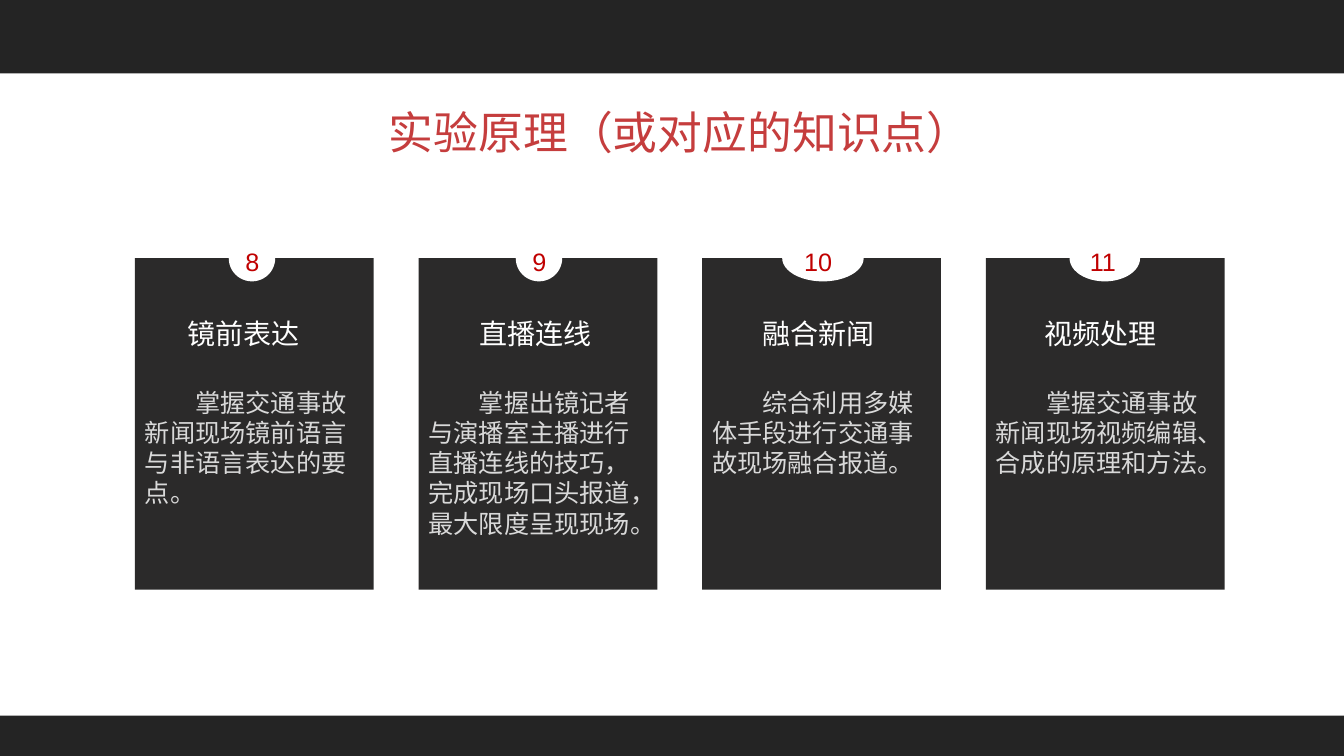
from dataclasses import dataclass
from typing import Optional

from lxml import etree
from pptx import Presentation
from pptx.dml.color import RGBColor
from pptx.enum import shapes, text
from pptx.oxml import ns
from pptx.shapes.autoshape import Shape
from pptx.slide import Slide
from pptx.util import Pt


@dataclass(frozen=True)
class Theme:
    band: str = "242424"
    card: str = "2B2A2A"
    white: str = "FFFFFF"
    title: str = "C53D3D"
    number: str = "C00000"
    body: str = "D9D9D9"
    title_size: float = 32
    heading_size: float = 20
    body_size: float = 18
    title_font: str = "Noto Sans CJK JP"
    text_font: str = "Noto Sans CJK SC"
    number_font: str = "Arial"


@dataclass(frozen=True)
class Box:
    left: float
    top: float
    width: float
    height: float

    def lengths(self) -> list[Pt]:
        return [Pt(value) for value in (self.left, self.top, self.width, self.height)]


@dataclass(frozen=True)
class Topic:
    number: str
    heading: str
    body: str
    badge_left: float
    badge_width: float
    heading_box: Box


THEME = Theme()
SLIDE_WIDTH, SLIDE_HEIGHT = 960, 540
CARD_LEFT, CARD_TOP, CARD_PITCH = 96.4, 184.4, 202.6
CARD_WIDTH, CARD_HEIGHT = 170.6, 236.8
BADGE_HEIGHT = 33.2
BADGE_TOP = CARD_TOP - BADGE_HEIGHT / 2

BANDS = [Box(0, 0, SLIDE_WIDTH, 52.4), Box(0, 511.2, SLIDE_WIDTH, 28.8)]
TITLE_BOX = Box(270.7, 70.6, 462.2, 46.1)
TOPICS = [
    Topic("8", "镜前表达", "掌握交通事故新闻现场镜前语言与非语言表达的要点。",
          163.4, 33.2, Box(126.7, 222.5, 126.7, 31.7)),
    Topic("9", "直播连线", "掌握出镜记者与演播室主播进行直播连线的技巧，完成现场口头报道，最大限度呈现现场。",
          368.4, 33.2, Box(335.5, 223.6, 113, 28.8)),
    Topic("10", "融合新闻", "综合利用多媒体手段进行交通事故现场融合报道。",
          558.7, 58.2, Box(537.8, 223.6, 113, 28.8)),
    Topic("11", "视频处理", "掌握交通事故新闻现场视频编辑、合成的原理和方法。",
          764, 50.4, Box(738.7, 224, 113, 28.8)),
]


def add_filled(slide: Slide, kind: shapes.MSO_SHAPE, box: Box, color: str) -> Shape:
    shape = slide.shapes.add_shape(kind, *box.lengths())
    shape.shadow.inherit = False
    shape.fill.solid()
    shape.fill.fore_color.rgb = RGBColor.from_string(color)
    shape.line.fill.background()
    return shape


def write(shape: Shape, words: str, *, font: str, size: float, color: str,
          anchor: text.MSO_ANCHOR = text.MSO_ANCHOR.MIDDLE,
          top_inset: float = 3.6, bottom_inset: float = 3.6,
          first_indent: float = 0, line_height: Optional[float] = None) -> None:
    """Fill a shape with one left-aligned paragraph; lengths are in points."""
    frame = shape.text_frame
    frame.word_wrap = True
    frame.vertical_anchor = anchor
    frame.margin_top, frame.margin_bottom = Pt(top_inset), Pt(bottom_inset)
    paragraph = frame.paragraphs[0]
    paragraph.alignment = text.PP_ALIGN.LEFT
    if line_height:
        paragraph.line_spacing = Pt(line_height)
    if first_indent:
        properties = paragraph._p.get_or_add_pPr()
        properties.set("marL", "0")
        properties.set("indent", str(int(Pt(first_indent))))
    run = paragraph.add_run()
    run.text = words
    run.font.size = Pt(size)
    run.font.color.rgb = RGBColor.from_string(color)
    run.font.name = font
    east_asian = etree.SubElement(run._r.get_or_add_rPr(), ns.qn("a:ea"))
    east_asian.set("typeface", font)


def add_topic(slide: Slide, topic: Topic, card_left: float) -> None:
    card = add_filled(slide, shapes.MSO_SHAPE.RECTANGLE,
                      Box(card_left, CARD_TOP, CARD_WIDTH, CARD_HEIGHT), THEME.card)
    write(card, topic.body, font=THEME.text_font, size=THEME.body_size, color=THEME.body,
          anchor=text.MSO_ANCHOR.TOP, top_inset=92, first_indent=36, line_height=21.6)

    badge = add_filled(slide, shapes.MSO_SHAPE.FLOWCHART_CONNECTOR,
                       Box(topic.badge_left, BADGE_TOP, topic.badge_width, BADGE_HEIGHT),
                       THEME.white)
    write(badge, topic.number, font=THEME.number_font, size=THEME.body_size,
          color=THEME.number, anchor=text.MSO_ANCHOR.TOP, bottom_inset=0)

    heading = slide.shapes.add_textbox(*topic.heading_box.lengths())
    write(heading, topic.heading, font=THEME.text_font, size=THEME.heading_size,
          color=THEME.white)


def main() -> None:
    deck = Presentation()
    deck.slide_width, deck.slide_height = Pt(SLIDE_WIDTH), Pt(SLIDE_HEIGHT)
    slide = deck.slides.add_slide(deck.slide_layouts[6])

    for band in BANDS:
        add_filled(slide, shapes.MSO_SHAPE.RECTANGLE, band, THEME.band)
    title = slide.shapes.add_textbox(*TITLE_BOX.lengths())
    write(title, "实验原理（或对应的知识点）", font=THEME.title_font,
          size=THEME.title_size, color=THEME.title)
    for column, topic in enumerate(TOPICS):
        add_topic(slide, topic, CARD_LEFT + column * CARD_PITCH)

    deck.save("out.pptx")


if __name__ == "__main__":
    main()
